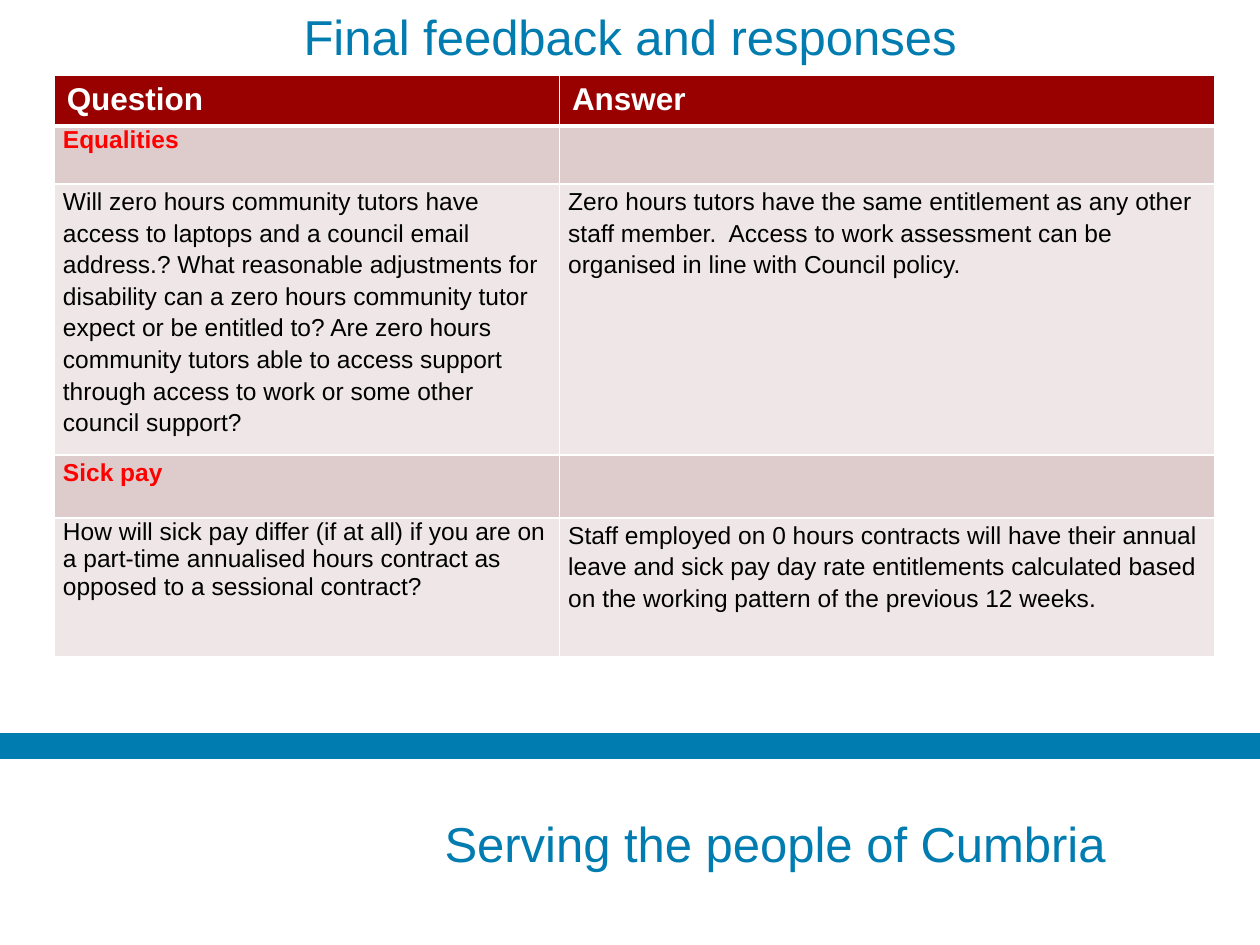
from dataclasses import dataclass

import lxml.etree
import pptx
import pptx.dml.color
import pptx.enum.shapes
import pptx.enum.text
import pptx.oxml.ns
import pptx.util

BLUE, WHITE, BLACK, RED = "007CB0", "FFFFFF", "000000", "FF0000"
HEADER_FILL, TOPIC_FILL, BODY_FILL = "990000", "DECCCC", "EFE7E7"
GRID_COLUMNS = 100
COLUMN_WIDTHS = (40.1, 52)

presentation = pptx.Presentation()
presentation.slide_width = pptx.util.Inches(10)
presentation.slide_height = pptx.util.Inches(7.5)


@dataclass
class CellStyle:
    fill: str
    color: str
    size: float = 14
    bold: bool = False
    side_margin: float = 0.7
    end_margin: float = 0
    bottom_border: float = 1


@dataclass
class TableRow:
    height: float
    texts: tuple[str, str]
    style: CellStyle
    spacings: tuple[float, float] = (1, 1)


HEADER = CellStyle(HEADER_FILL, WHITE, 18, True, 1, 0.5, 3)
TOPIC = CellStyle(TOPIC_FILL, RED, bold=True)
BODY = CellStyle(BODY_FILL, BLACK)

ROWS = (
    TableRow(4, ("Question", "Answer"), HEADER),
    TableRow(4.6, ("Equalities", ""), TOPIC),
    TableRow(21.5, (
        "Will zero hours community tutors have access to laptops and a council email address.? "
        "What reasonable adjustments for disability can a zero hours community tutor expect or "
        "be entitled to? Are zero hours community tutors able to access support through access "
        "to work or some other council support?",
        "Zero hours tutors have the same entitlement as any other staff member.  Access to work "
        "assessment can be organised in line with Council policy."), BODY, (1.15, 1.15)),
    TableRow(5, ("Sick pay", ""), TOPIC, (1.15, 1)),
    TableRow(11, (
        "How will sick pay differ (if at all) if you are on a part-time annualised hours "
        "contract as opposed to a sessional contract?",
        "Staff employed on 0 hours contracts will have their annual leave and sick pay day rate "
        "entitlements calculated based on the working pattern of the previous 12 weeks."),
        BODY, (1, 1.15)),
)


def grid(count: float) -> int:
    return round(presentation.slide_width * count / GRID_COLUMNS)


def rgb(color: str) -> pptx.dml.color.RGBColor:
    return pptx.dml.color.RGBColor.from_string(color)


def write_text(frame, text: str, *, size: float = 28, color: str = BLUE, bold: bool = False,
               align=pptx.enum.text.PP_ALIGN.LEFT, spacing: float = 1) -> None:
    frame.word_wrap = True
    paragraph = frame.paragraphs[0]
    paragraph.alignment = align
    paragraph.line_spacing = spacing
    paragraph.font.size = pptx.util.Pt(size)
    if text:
        run = paragraph.add_run()
        run.text = text
        run.font.name = "Arial"
        run.font.size = pptx.util.Pt(size)
        run.font.bold = bold
        run.font.color.rgb = rgb(color)


def add_borders(cell, bottom_width: float) -> None:
    properties = cell._tc.get_or_add_tcPr()
    for side, width in (("L", 1), ("R", 1), ("T", 1), ("B", bottom_width)):
        border = lxml.etree.SubElement(properties, pptx.oxml.ns.qn(f"a:ln{side}"),
                                       w=str(pptx.util.Pt(width)))
        fill = lxml.etree.SubElement(border, pptx.oxml.ns.qn("a:solidFill"))
        lxml.etree.SubElement(fill, pptx.oxml.ns.qn("a:srgbClr"), val=WHITE)


def draw_cell(cell, text: str, style: CellStyle, spacing: float) -> None:
    cell.margin_left = cell.margin_right = grid(style.side_margin)
    cell.margin_top = cell.margin_bottom = grid(style.end_margin)
    add_borders(cell, style.bottom_border)
    cell.fill.solid()
    cell.fill.fore_color.rgb = rgb(style.fill)
    write_text(cell.text_frame, text, size=style.size, color=style.color,
               bold=style.bold, spacing=spacing)


def draw_table(slide, rows: tuple[TableRow, ...]) -> None:
    table = slide.shapes.add_table(
        len(rows), len(COLUMN_WIDTHS), grid(4.3), grid(6),
        grid(sum(COLUMN_WIDTHS)), grid(sum(row.height for row in rows))).table
    for column, width in zip(table.columns, COLUMN_WIDTHS):
        column.width = grid(width)
    for table_row, row in zip(table.rows, rows):
        table_row.height = grid(row.height)
        for cell, text, spacing in zip(table_row.cells, row.texts, row.spacings):
            draw_cell(cell, text, row.style, spacing)


def draw_footer(slide) -> None:
    band = slide.shapes.add_connector(pptx.enum.shapes.MSO_CONNECTOR.STRAIGHT,
                                      grid(100), grid(59.2), 0, grid(59.2))
    band.line.color.rgb = rgb(BLUE)
    band.line.width = pptx.util.Pt(15)
    lxml.etree.SubElement(band._element.spPr, pptx.oxml.ns.qn("a:effectLst"))
    motto = slide.shapes.add_textbox(grid(34.3), grid(64.1), grid(59.1), grid(5.7))
    write_text(motto.text_frame, "Serving the people of Cumbria")


def draw_title(slide) -> None:
    title = slide.shapes.title
    title.left, title.top, title.width, title.height = map(grid, (7.5, 0.5, 85, 4.7))
    title.text_frame.auto_size = pptx.enum.text.MSO_AUTO_SIZE.NONE
    title.text_frame.vertical_anchor = pptx.enum.text.MSO_ANCHOR.MIDDLE
    write_text(title.text_frame, "Final feedback and responses",
               align=pptx.enum.text.PP_ALIGN.CENTER)


def main() -> None:
    slide = presentation.slides.add_slide(presentation.slide_layouts[5])
    draw_footer(slide)
    draw_title(slide)
    draw_table(slide, ROWS)
    presentation.save("out.pptx")


if __name__ == "__main__":
    main()
